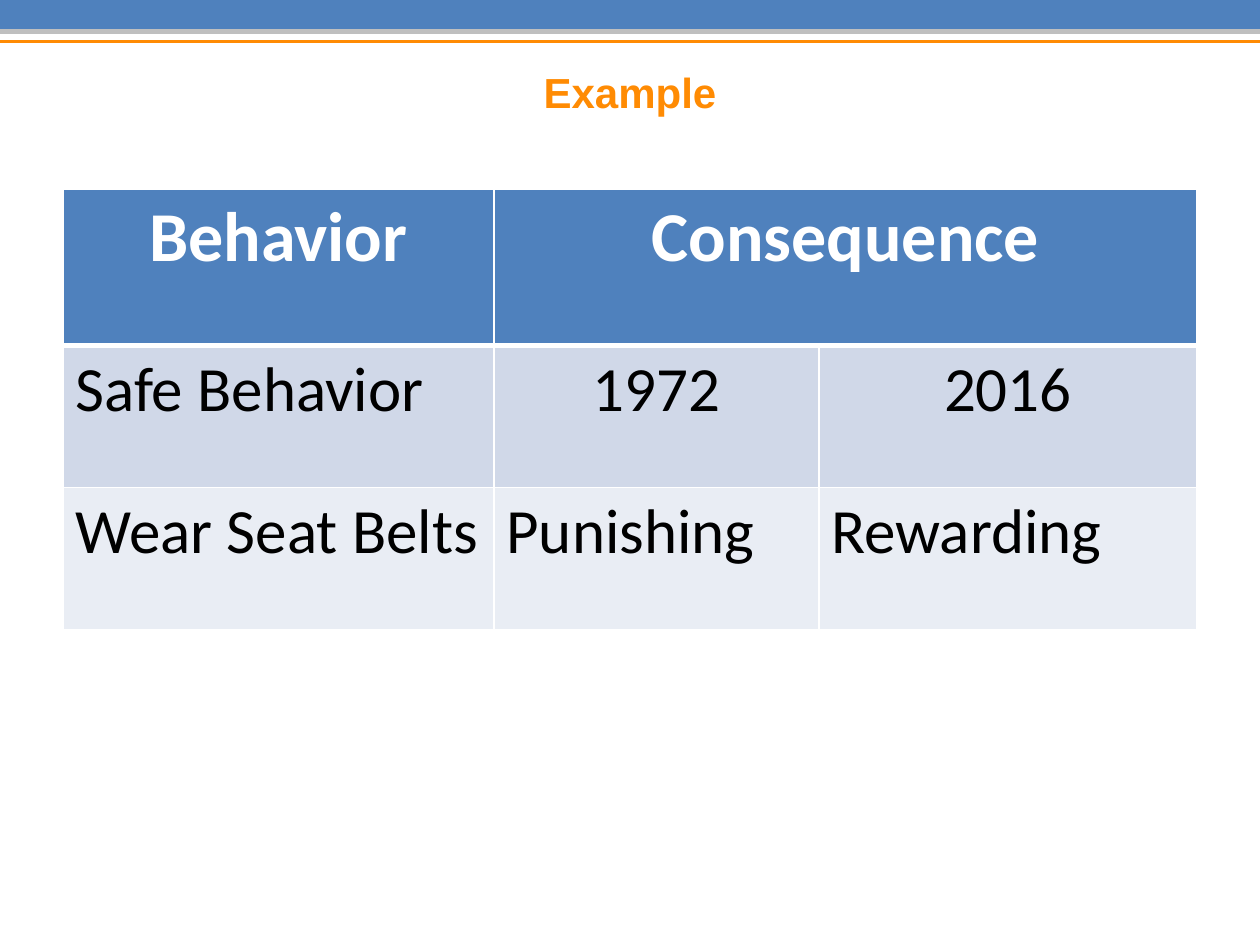
from dataclasses import dataclass

from lxml.etree import SubElement
from pptx import Presentation
from pptx.dml.color import RGBColor
from pptx.enum.shapes import MSO_CONNECTOR, MSO_SHAPE
from pptx.enum.text import MSO_ANCHOR, PP_ALIGN
from pptx.oxml.ns import qn
from pptx.util import Inches, Pt

BLUE = RGBColor(0x4F, 0x81, 0xBD)
GREY = RGBColor(0xBF, 0xBF, 0xBF)
ORANGE = RGBColor(0xFF, 0x8B, 0x03)
BAND_DARK = RGBColor(0xD0, 0xD8, 0xE8)
BAND_LIGHT = RGBColor(0xE9, 0xED, 0xF4)
WHITE = RGBColor(0xFF, 0xFF, 0xFF)
BLACK = RGBColor(0, 0, 0)

TITLE_FONT = {"name": "Arial", "size": Pt(24), "bold": True}
HEAD_FONT = {"name": "Calibri", "size": Pt(40), "bold": True}
BODY_FONT = {"name": "Calibri", "size": Pt(36), "bold": False}


@dataclass
class Rule:
    y: float
    color: RGBColor
    weight: float


@dataclass
class Row:
    height: float
    texts: tuple[str, ...]
    centered: tuple[int, ...]
    fill: RGBColor
    font: dict
    color: RGBColor
    bottom: float = 1


RULES = [Rule(0.25, GREY, 3), Rule(0.33, ORANGE, 1.5)]
COL_WIDTHS = [3.42, 2.58, 3]
ROWS = [
    Row(1.24, ("Behavior", "Consequence", ""), (0, 1), BLUE, HEAD_FONT, WHITE, 3),
    Row(1.13, ("Safe Behavior", "1972", "2016"), (1, 2), BAND_DARK, BODY_FONT, BLACK),
    Row(1.13, ("Wear Seat Belts", "Punishing", "Rewarding"), (), BAND_LIGHT, BODY_FONT, BLACK),
]


def write(tf, text: str, fmt: dict, color: RGBColor, align) -> None:
    p = tf.paragraphs[0]
    p.alignment = align
    r = p.add_run()
    r.text = text
    for name, value in fmt.items():
        setattr(r.font, name, value)
    r.font.color.rgb = color


def draw_rule(s, rule: Rule) -> None:
    y = Inches(rule.y)
    line = s.shapes.add_connector(MSO_CONNECTOR.STRAIGHT, 0, y, Inches(10), y)
    line.line.color.rgb = rule.color
    line.line.width = Pt(rule.weight)
    SubElement(line._element.spPr, qn("a:effectLst"))


def set_borders(cell, weights: dict[str, float]) -> None:
    tcPr = cell._tc.get_or_add_tcPr()
    for side, weight in weights.items():
        ln = SubElement(tcPr, qn(f"a:ln{side}"), w=str(Pt(weight)))
        fill = SubElement(ln, qn("a:solidFill"))
        SubElement(fill, qn("a:srgbClr"), val=str(WHITE))


def draw_table(s, rows: list[Row]) -> None:
    height = sum(row.height for row in rows)
    table = s.shapes.add_table(len(rows), len(COL_WIDTHS), Inches(0.5), Inches(1.5),
                               Inches(sum(COL_WIDTHS)), Inches(height)).table
    for column, width in zip(table.columns, COL_WIDTHS):
        column.width = Inches(width)
    table.cell(0, 1).merge(table.cell(0, 2))
    top = 1
    for i, row in enumerate(rows):
        table.rows[i].height = Inches(row.height)
        for j, text in enumerate(row.texts):
            cell = table.cell(i, j)
            set_borders(cell, {"L": 1, "R": 1, "T": top, "B": row.bottom})
            cell.fill.solid()
            cell.fill.fore_color.rgb = row.fill
            if text:
                align = PP_ALIGN.CENTER if j in row.centered else PP_ALIGN.LEFT
                write(cell.text_frame, text, row.font, row.color, align)
        top = row.bottom


def main() -> None:
    prs = Presentation()
    prs.slide_width, prs.slide_height = Inches(10), Inches(7.5)
    s = prs.slides.add_slide(prs.slide_layouts[6])

    # Top band and rules
    sp = s.shapes.add_shape(MSO_SHAPE.RECTANGLE, 0, Inches(-0.01), Inches(10), Inches(0.26))
    sp.shadow.inherit = False
    sp.fill.solid()
    sp.fill.fore_color.rgb = BLUE
    sp.line.fill.background()
    for rule in RULES:
        draw_rule(s, rule)

    # Title
    tf = s.shapes.add_textbox(Inches(0.5), Inches(0.45), Inches(9), Inches(0.55)).text_frame
    tf.word_wrap = True
    tf.vertical_anchor = MSO_ANCHOR.MIDDLE
    write(tf, "Example", TITLE_FONT, ORANGE, PP_ALIGN.CENTER)

    # Behavior and consequence table
    draw_table(s, ROWS)
    prs.save("out.pptx")


if __name__ == "__main__":
    main()
